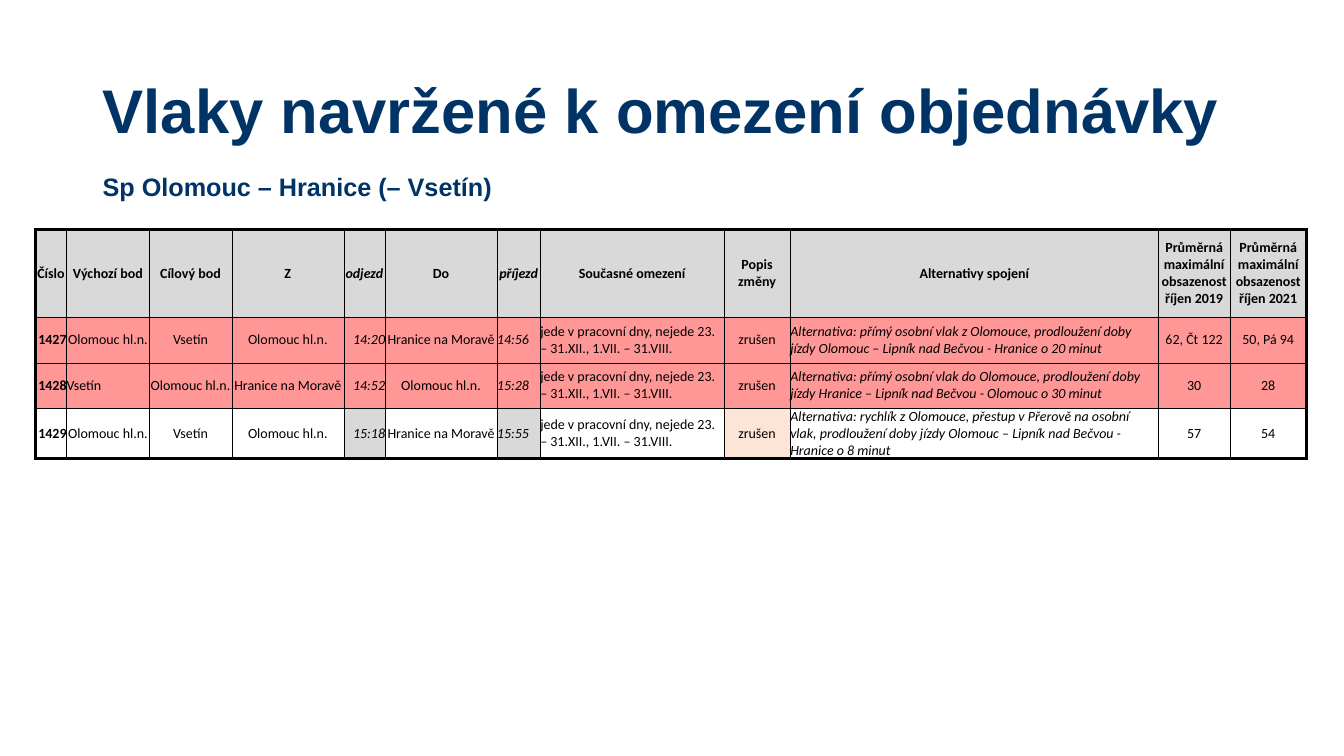
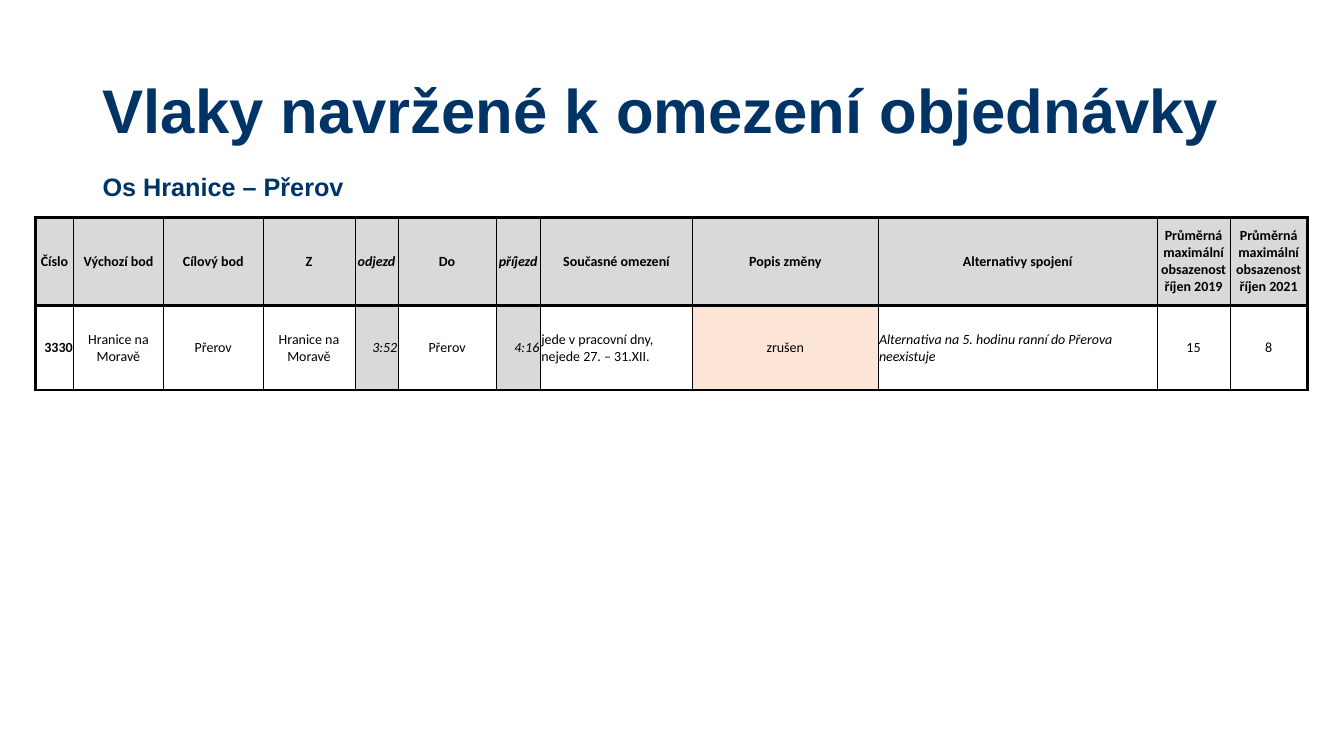
from lxml.etree import SubElement
from pptx import Presentation
from pptx.dml.color import RGBColor
from pptx.enum.text import MSO_ANCHOR, MSO_AUTO_SIZE, PP_ALIGN
from pptx.oxml.ns import qn
from pptx.util import Inches, Pt

# Shared look
NAVY = RGBColor(0x00, 0x33, 0x66)
BLACK = RGBColor(0x00, 0x00, 0x00)
WHITE = RGBColor(0xFF, 0xFF, 0xFF)
GREY = RGBColor(0xD9, 0xD9, 0xD9)
PEACH = RGBColor(0xFC, 0xE4, 0xD6)
RED = RGBColor(0xFF, 0x97, 0x97)
THIN, THICK = 0.25, 2.25
ALIGNMENTS = {"l": PP_ALIGN.LEFT, "c": PP_ALIGN.CENTER, "r": PP_ALIGN.RIGHT}
TABLE_LEFT = 0.35

# Content
TITLE = "Vlaky navržené k omezení objednávky"
HEADINGS = [
    "Číslo", "Výchozí bod", "Cílový bod", "Z", "odjezd", "Do", "příjezd",
    "Současné omezení", "Popis změny", "Alternativy spojení",
    "Průměrná maximální obsazenost říjen 2019",
    "Průměrná maximální obsazenost říjen 2021",
]
NUMBER, DEPARTURE, ARRIVAL, CHANGE, ALTERNATIVE = 0, 4, 6, 8, 9
TIMES = (DEPARTURE, ARRIVAL)
WEEKDAYS = "jede v pracovní dny, nejede 23. – 31.XII., 1.VII. – 31.VIII."

# Each train: highlighted, alignment per column, cell texts
SLIDES = [
    {
        "subtitle": "Sp Olomouc – Hranice (– Vsetín)",
        "top": 2.28,
        "columns": [0.31, 0.82, 0.82, 1.11, 0.41, 1.11, 0.43, 1.82, 0.66, 3.65, 0.71, 0.76],
        "rows": [0.87, 0.45, 0.45, 0.45],
        "inset": 0,
        "header_rule": THIN,
        "trains": [
            (True, "rcccrcllclcc", [
                "1427", "Olomouc hl.n.", "Vsetín", "Olomouc hl.n.", "14:20",
                "Hranice na Moravě", "14:56", WEEKDAYS, "zrušen",
                "Alternativa: přímý osobní vlak z Olomouce, prodloužení doby jízdy "
                "Olomouc – Lipník nad Bečvou - Hranice o 20 minut",
                "62, Čt 122", "50, Pá 94"]),
            (True, "rlccrcllclcc", [
                "1428", "Vsetín", "Olomouc hl.n.", "Hranice na Moravě", "14:52",
                "Olomouc hl.n.", "15:28", WEEKDAYS, "zrušen",
                "Alternativa: přímý osobní vlak do Olomouce, prodloužení doby jízdy "
                "Hranice – Lipník nad Bečvou - Olomouc o 30 minut",
                "30", "28"]),
            (False, "rcccrcllclcc", [
                "1429", "Olomouc hl.n.", "Vsetín", "Olomouc hl.n.", "15:18",
                "Hranice na Moravě", "15:55", WEEKDAYS, "zrušen",
                "Alternativa: rychlík z Olomouce, přestup v Přerově na osobní vlak, "
                "prodloužení doby jízdy Olomouc – Lipník nad Bečvou - Hranice o 8 minut",
                "57", "54"]),
        ],
    },
    {
        "subtitle": "Os Hranice – Přerov",
        "top": 2.16,
        "columns": [0.38, 0.89, 0.99, 0.91, 0.43, 0.97, 0.44, 1.51, 1.84, 2.77, 0.72, 0.77],
        "rows": [0.87, 0.84],
        "inset": 0.01,
        "header_rule": THICK,
        "trains": [
            (False, "rcccrcrlclcc", [
                "3330", "Hranice na Moravě", "Přerov", "Hranice na Moravě", "3:52",
                "Přerov", "4:16", "jede v pracovní dny, nejede 27. – 31.XII.", "zrušen",
                "Alternativa na 5. hodinu ranní do Přerova neexistuje",
                "15", "8"]),
        ],
    },
]


def set_font(paragraph, name, size, color, bold, italic=False):
    font = paragraph.font
    font.name, font.size, font.bold, font.italic = name, Pt(size), bold, italic
    font.color.rgb = color


def set_borders(cell, left, right, top, bottom):
    properties = cell._tc.get_or_add_tcPr()
    widths = {"a:lnL": left, "a:lnR": right, "a:lnT": top, "a:lnB": bottom}
    for position, (tag, width) in enumerate(widths.items()):
        line = SubElement(properties, qn(tag), w=str(Pt(width)))
        fill = SubElement(line, qn("a:solidFill"))
        SubElement(fill, qn("a:srgbClr"), val=str(BLACK))
        properties.insert(position, line)


def cell_color(row, column, highlighted):
    if row == 0:
        return GREY
    if highlighted:
        return RED
    if column in TIMES:
        return GREY
    return PEACH if column == CHANGE else WHITE


def add_headings(slide, subtitle):
    title = slide.shapes.title
    title.left, title.top, title.width, title.height = map(Inches, (0.92, 0.4, 11.5, 1.45))
    frame = title.text_frame
    frame.text = TITLE
    frame.word_wrap = True
    frame.auto_size = MSO_AUTO_SIZE.NONE
    frame.vertical_anchor = MSO_ANCHOR.MIDDLE
    paragraph = frame.paragraphs[0]
    paragraph.alignment, paragraph.line_spacing = PP_ALIGN.LEFT, 0.9
    set_font(paragraph, "Arial", 44, NAVY, True)

    box = slide.shapes.add_textbox(*map(Inches, (0.92, 1.65, 6.67, 0.4)))
    frame = box.text_frame
    frame.text = subtitle
    frame.word_wrap = True
    frame.auto_size = MSO_AUTO_SIZE.SHAPE_TO_FIT_TEXT
    set_font(frame.paragraphs[0], "Arial", 18, NAVY, True)


def add_train_table(slide, content):
    columns, rows = content["columns"], content["rows"]
    table = slide.shapes.add_table(
        len(rows), len(columns), Inches(TABLE_LEFT), Inches(content["top"]),
        Inches(sum(columns)), Inches(sum(rows))).table
    table.first_row = table.horz_banding = False
    for column, width in zip(table.columns, columns):
        column.width = Inches(width)
    for row, height in zip(table.rows, rows):
        row.height = Inches(height)

    # Horizontal rules from the top edge to the bottom edge
    rules = [THICK, content["header_rule"]] + [THIN] * (len(rows) - 2) + [THICK]
    last_column = len(columns) - 1
    lines = [(False, "c" * len(columns), HEADINGS)] + content["trains"]
    for r, (highlighted, alignments, texts) in enumerate(lines):
        for c, text in enumerate(texts):
            cell = table.cell(r, c)
            cell.text = text
            cell.vertical_anchor = MSO_ANCHOR.MIDDLE
            inset = Inches(content["inset"] if r else 0)
            cell.margin_left = cell.margin_right = cell.margin_top = inset
            cell.margin_bottom = 0
            cell.fill.solid()
            cell.fill.fore_color.rgb = cell_color(r, c, highlighted)
            set_borders(cell, THICK if c == 0 else THIN,
                        THICK if c == last_column else THIN, rules[r], rules[r + 1])
            paragraph = cell.text_frame.paragraphs[0]
            paragraph.alignment = ALIGNMENTS[alignments[c]]
            italic = c in TIMES or (r > 0 and c == ALTERNATIVE)
            set_font(paragraph, "Calibri", 10, BLACK, r == 0 or c == NUMBER, italic)


def main():
    presentation = Presentation()
    presentation.slide_width, presentation.slide_height = Inches(13.33), Inches(7.5)
    title_only = presentation.slide_layouts[5]
    for content in SLIDES:
        slide = presentation.slides.add_slide(title_only)
        add_headings(slide, content["subtitle"])
        add_train_table(slide, content)
    presentation.save("out.pptx")


if __name__ == "__main__":
    main()
